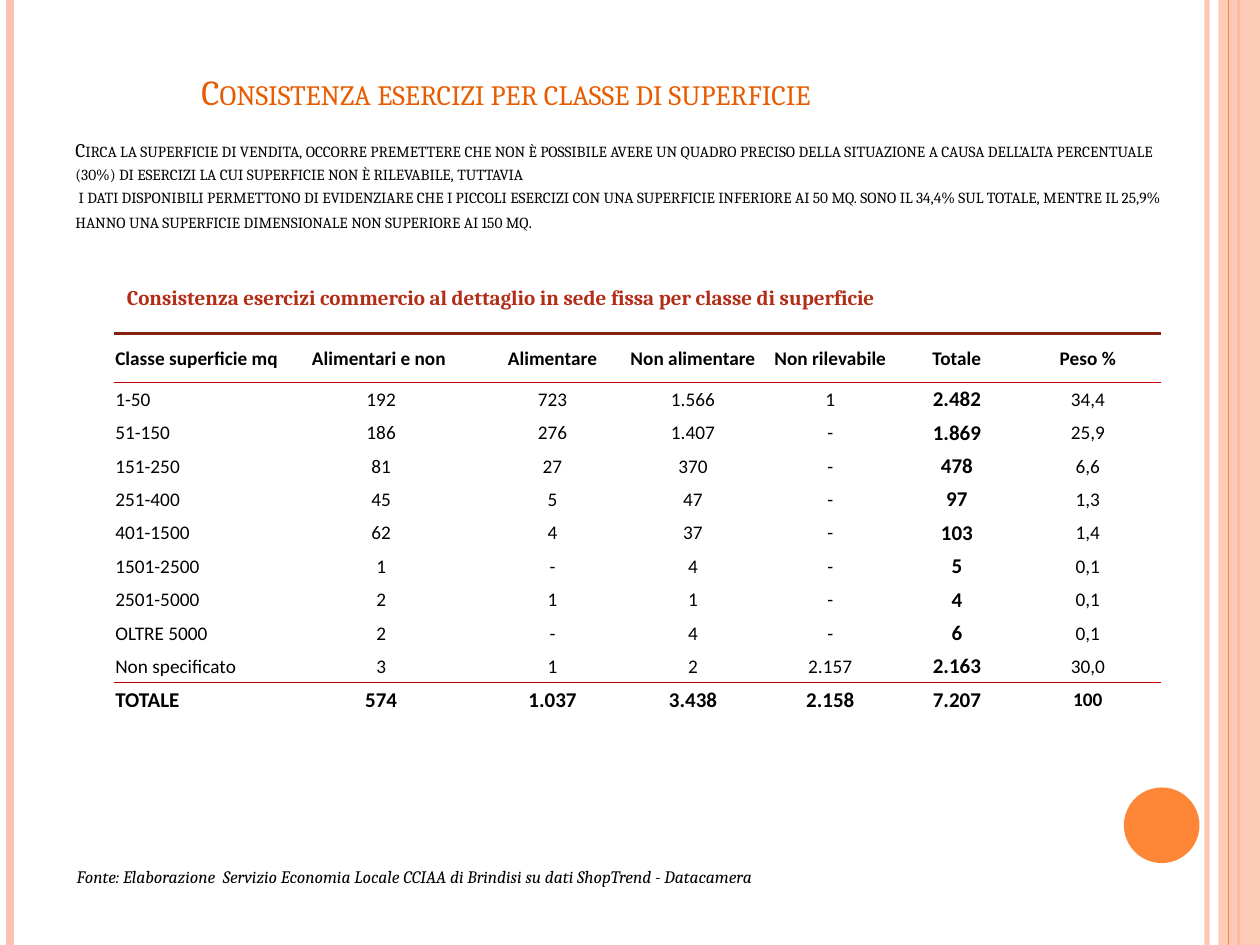
import pptx
import pptx.util
import pptx.dml.color
import pptx.enum.shapes
import pptx.enum.text
import pptx.oxml
import pptx.oxml.ns
import lxml.etree

Inches = pptx.util.Inches
Pt = pptx.util.Pt
MSO_SHAPE = pptx.enum.shapes.MSO_SHAPE
ANCHOR = pptx.enum.text.MSO_ANCHOR
CENTER = pptx.enum.text.PP_ALIGN.CENTER
qn = pptx.oxml.ns.qn


def color(fmt, value, alpha=100):
    fmt.rgb = pptx.dml.color.RGBColor.from_string(value)
    if alpha < 100:
        clr = fmt._xFill.find(qn("a:srgbClr"))
        lxml.etree.SubElement(clr, qn("a:alpha")).set("val", str(alpha * 1000))


def text(p, value, size=11, font="Cambria", fill="000000", bold=False, italic=False, caps=False):
    r = p.add_run()
    r.text = value
    r.font.size = Pt(size)
    r.font.name = font
    r.font.bold = bold
    r.font.italic = italic
    color(r.font.color, fill)
    if caps:
        r._r.get_or_add_rPr().set("cap", "small")


prs = pptx.Presentation()
prs.slide_width = Inches(10)
prs.slide_height = Inches(7.5)
s = prs.slides.add_slide(prs.slide_layouts[6])

decorations = [
    ("line", 9.58, 0, 0, 7.5, "FEC3AE", 93, 3),
    ("line", 0.08, 0, 0, 7.5, "FEC3AE", 100, 4.5),
    ("line", 9.83, 0, 0, 7.5, "FE8637", 100, 1.5),
    (MSO_SHAPE.RECTANGLE, 9.67, 0, 0.33, 7.5, "FEC3AE", 87, 0),
    ("line", 9.75, 0, 0, 7.5, "FE8637", 100, 0.75),
    (MSO_SHAPE.OVAL, 8.92, 6.25, 0.6, 0.6, "FE8637", 100, 0),
]
for kind, x, y, w, h, fill, alpha, weight in decorations:
    if kind == "line":
        sp = s.shapes.add_connector(pptx.enum.shapes.MSO_CONNECTOR.STRAIGHT, Inches(x), Inches(y), Inches(x), Inches(h))
        sp.line.width = Pt(weight)
        color(sp.line.color, fill, alpha)
        lxml.etree.SubElement(sp._element.spPr, qn("a:effectLst"))
    else:
        sp = s.shapes.add_shape(kind, Inches(x), Inches(y), Inches(w), Inches(h))
        sp.shadow.inherit = False
        sp.fill.solid()
        color(sp.fill.fore_color, fill, alpha)
        sp.line.fill.background()

sp = s.shapes.add_textbox(Inches(0.5), Inches(0.3), Inches(8.99), Inches(1.8))
tf = sp.text_frame
tf.word_wrap = True
tf.vertical_anchor = ANCHOR.BOTTOM
tf.margin_bottom = Inches(0.25)
p = tf.paragraphs[0]
p._p.get_or_add_pPr().set("marL", str(Inches(1)))
p.space_after = Pt(15)
text(p, "Consistenza esercizi per classe di superficie", size=20, fill="E75C01", caps=True)
p = tf.add_paragraph()
text(p, "Circa la superficie di vendita, occorre premettere che non è possibile avere un quadro preciso della situazione a causa dell’alta percentuale (30%) di esercizi la cui superficie non è rilevabile, tuttavia", caps=True)
p = tf.add_paragraph()
text(p, " i dati disponibili permettono di evidenziare che i piccoli esercizi con una superficie inferiore ai 50 mq. sono il 34,4% sul totale, mentre il 25,9% hanno una superficie dimensionale non superiore ai 150 mq", caps=True)
text(p, ".", size=12, caps=True)

rows = [
    ["Classe superficie mq", "Alimentari e non ", "Alimentare", "Non alimentare", "Non rilevabile", "Totale", "Peso %"],
    ["1-50", "192", "723", "1.566", "1", "2.482", "34,4"],
    ["51-150", "186", "276", "1.407", "-", "1.869", "25,9"],
    ["151-250", "81", "27", "370", "-", "478", "6,6"],
    ["251-400", "45", "5", "47", "-", "97", "1,3"],
    ["401-1500", "62", "4", "37", "-", "103", "1,4"],
    ["1501-2500", "1", "-", "4", "-", "5", "0,1"],
    ["2501-5000", "2", "1", "1", "-", "4", "0,1"],
    ["OLTRE 5000", "2", "-", "4", "-", "6", "0,1"],
    ["Non specificato", "3", "1", "2", "2.157", "2.163", "30,0"],
    ["TOTALE", "574", "1.037", "3.438", "2.158", "7.207", "100"],
]
widths = [1.33, 1.58, 1.14, 1.09, 1.09, 0.92, 1.16]
last = len(rows) - 1
red = ("C00000", 0.75)
borders = {
    (0, "lnT"): ("862110", 2.25),
    (0, "lnB"): red,
    (1, "lnT"): red,
    (last - 1, "lnB"): red,
    (last, "lnT"): red,
}

tables = [
    (0.905, 2.645, widths, [0.39] + [0.265] * last, rows),
    (0.91, 5.2, [8.35], [0.4], [[""]]),
]
for x, y, col_widths, row_heights, values in tables:
    tbl = s.shapes.add_table(
        len(row_heights), len(col_widths), Inches(x), Inches(y), Inches(sum(col_widths)), Inches(sum(row_heights))
    ).table
    tbl.first_row = False
    tbl.horz_banding = False
    tbl._tbl.tblPr.find(qn("a:tableStyleId")).text = "{2D5ABB26-0587-4C30-8999-92F81FD0307C}"
    for col, width in zip(tbl.columns, col_widths):
        col.width = Inches(width)
    for i, row in enumerate(values):
        tbl.rows[i].height = Inches(row_heights[i])
        for j, value in enumerate(row):
            cell = tbl.cell(i, j)
            cell.fill.background()
            if not value:
                continue
            cell.vertical_anchor = ANCHOR.MIDDLE
            cell.margin_left = cell.margin_right = cell.margin_top = Inches(0.01)
            cell.margin_bottom = 0
            p = cell.text_frame.paragraphs[0]
            if j:
                p.alignment = CENTER
            large = (i == last and j < 6) or (i > 0 and j == 5)
            text(p, value, size=12 if large else 11, font="Calibri", bold=large or i in (0, last))
            for k, side in enumerate(["lnL", "lnR", "lnT", "lnB"]):
                ln = pptx.oxml.parse_xml(f'<a:{side} {pptx.oxml.ns.nsdecls("a")}/>')
                if (i, side) in borders:
                    fill, weight = borders[i, side]
                    ln.set("w", str(Pt(weight)))
                    solid = lxml.etree.SubElement(ln, qn("a:solidFill"))
                    lxml.etree.SubElement(solid, qn("a:srgbClr")).set("val", fill)
                else:
                    lxml.etree.SubElement(ln, qn("a:noFill"))
                cell._tc.get_or_add_tcPr().insert(k, ln)

captions = [
    (0.91, 2.01, 8.27, 0.5, "Consistenza esercizi commercio al dettaglio in sede fissa per classe di superficie",
     dict(size=12, fill="B32C16", bold=True)),
    (0.51, 6.82, 8.58, 0.27, "Fonte: Elaborazione  Servizio Economia Locale CCIAA di Brindisi su dati ShopTrend - Datacamera",
     dict(size=10, italic=True)),
]
for x, y, w, h, value, style in captions:
    sp = s.shapes.add_textbox(Inches(x), Inches(y), Inches(w), Inches(h))
    tf = sp.text_frame
    tf.word_wrap = True
    tf.vertical_anchor = ANCHOR.BOTTOM
    text(tf.paragraphs[0], value, **style)

prs.save("out.pptx")
